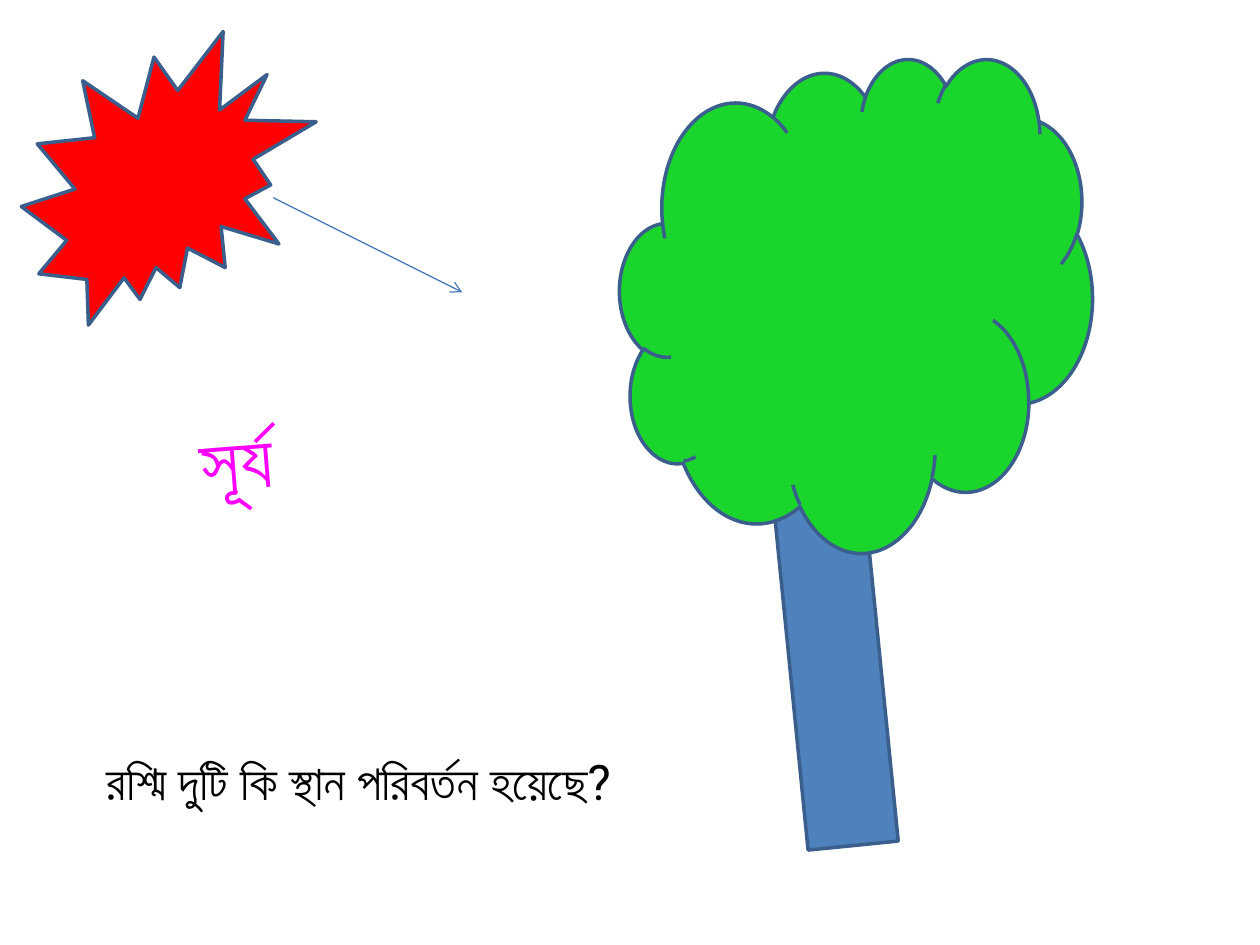
from dataclasses import dataclass
from typing import Optional

from pptx import Presentation
from pptx import util as u
from pptx.dml.color import RGBColor
from pptx.enum import shapes, text
from pptx.oxml.ns import qn
from lxml import etree

OUTLINE = "3A5F8C"
FONT = "Roboto"


# All lengths are in points
@dataclass
class Figure:
    kind: shapes.MSO_SHAPE
    left: float
    top: float
    width: float
    height: float
    fill: str
    rotation: float = 0


@dataclass
class Label:
    words: str
    left: float
    top: float
    width: float
    height: float
    size: float
    color: str
    rotation: float = 0
    align: Optional[text.PP_ALIGN] = None


def rgb(value: str) -> RGBColor:
    return RGBColor.from_string(value)


def box(item) -> list:
    return [u.Pt(v) for v in (item.left, item.top, item.width, item.height)]


def draw_figure(s, f: Figure) -> None:
    sp = s.shapes.add_shape(f.kind, *box(f))
    sp.rotation = f.rotation
    sp.shadow.inherit = False
    sp.fill.solid()
    sp.fill.fore_color.rgb = rgb(f.fill)
    sp.line.color.rgb = rgb(OUTLINE)
    sp.line.width = u.Pt(2)


def draw_ray(s, x1: float, y1: float, x2: float, y2: float) -> None:
    ray = s.shapes.add_connector(shapes.MSO_CONNECTOR.STRAIGHT,
                                 u.Pt(x1), u.Pt(y1), u.Pt(x2), u.Pt(y2))
    ray.line.color.rgb = rgb("4B7EBC")
    ray.line.width = u.Pt(0.75)
    etree.SubElement(ray.line._get_or_add_ln(), qn("a:tailEnd"), type="arrow")
    etree.SubElement(ray._element.spPr, qn("a:effectLst"))


def draw_label(s, label: Label) -> None:
    sp = s.shapes.add_textbox(*box(label))
    sp.rotation = label.rotation
    tf = sp.text_frame
    tf.word_wrap = True
    tf.auto_size = text.MSO_AUTO_SIZE.SHAPE_TO_FIT_TEXT
    p = tf.paragraphs[0]
    p.alignment = label.align
    r = p.add_run()
    r.text = label.words
    r.font.name = FONT
    r.font.size = u.Pt(label.size)
    r.font.color.rgb = rgb(label.color)


TRUNK = Figure(shapes.MSO_SHAPE.RECTANGLE, 450.7, 262.8, 51.8, 221, "4F81BD", 354.3)
CROWN = Figure(shapes.MSO_SHAPE.CLOUD, 354.2, 33.1, 270, 282.2, "1AD62C")
SUN = Figure(shapes.MSO_SHAPE.EXPLOSION2, 12.2, 18, 168.5, 167.8, "FF0000")
LABELS = [
    Label("রশ্মি দুটি কি স্থান পরিবর্তন হয়েছে?", 54, 426.2, 360, 41, 28, "000000"),
    Label("সূর্য", 36, 232.6, 198, 60.5, 44, "FF00FF", 355.4, text.PP_ALIGN.CENTER),
]


def main() -> None:
    prs = Presentation()
    prs.slide_width, prs.slide_height = u.Pt(720), u.Pt(540)
    s = prs.slides.add_slide(prs.slide_layouts[6])

    # Tree
    draw_figure(s, TRUNK)
    draw_figure(s, CROWN)

    # Sun and its ray
    draw_ray(s, 156.2, 113, 264.2, 167)
    draw_figure(s, SUN)

    # Question and sun name
    for label in LABELS:
        draw_label(s, label)

    prs.save("out.pptx")


if __name__ == "__main__":
    main()
